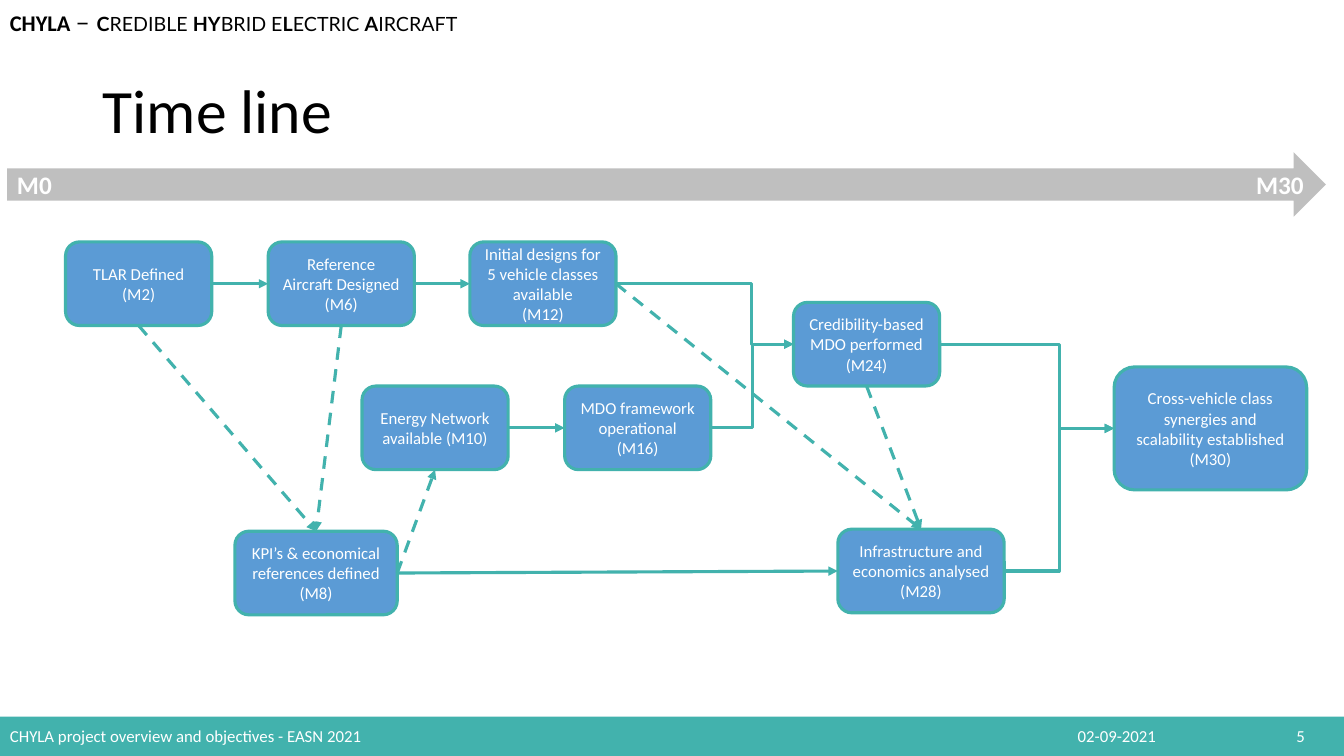
"""Build the CHYLA project time line slide."""
from lxml.etree import SubElement
from pptx import Presentation
from pptx.dml.color import RGBColor
from pptx.enum.dml import MSO_LINE
from pptx.enum.shapes import MSO_CONNECTOR as LINK, MSO_SHAPE as SHAPE
from pptx.enum.text import MSO_ANCHOR as ANCHOR, PP_ALIGN as ALIGN
from pptx.oxml.ns import qn
from pptx.util import Inches, Pt

TEAL = RGBColor(0x42, 0xB2, 0xAD)
BLUE = RGBColor(0x5B, 0x9B, 0xD5)
GREY = RGBColor(0xBF, 0xBF, 0xBF)
WHITE = RGBColor(0xFF, 0xFF, 0xFF)
BLACK = RGBColor(0, 0, 0)
TOP, LEFT, BOTTOM, RIGHT = range(4)

prs = Presentation()
prs.slide_width, prs.slide_height = Inches(13.33), Inches(7.5)
slide = prs.slides.add_slide(prs.slide_layouts[5])
shapes = slide.shapes


def add_block(kind, box, fill):
    block = shapes.add_shape(kind, *map(Inches, box))
    block.shadow.inherit = False
    block.fill.solid()
    block.fill.fore_color.rgb = fill
    block.line.fill.background()
    return block


def add_label(text, box, size, bold=False, align=ALIGN.LEFT):
    label = shapes.add_textbox(*map(Inches, box))
    frame = label.text_frame
    frame.word_wrap = True
    frame.vertical_anchor = ANCHOR.MIDDLE
    line = frame.paragraphs[0]
    line.text = text
    line.alignment = align
    line.font.name, line.font.size, line.font.bold = "Calibri", Pt(size), bold
    line.font.color.rgb = WHITE


add_block(SHAPE.RECTANGLE, (0, 7.11, 13.33, 0.39), TEAL)
add_label("02-09-2021", (10.59, 7.1, 1.75, 0.4), 12)
add_label("CHYLA project overview and objectives - EASN 2021", (0, 7.1, 9.96, 0.4), 12)
add_label("5", (12.37, 7.1, 0.67, 0.4), 12, align=ALIGN.RIGHT)

header = shapes.add_textbox(Inches(0), Inches(0.01), Inches(9.96), Inches(0.4))
header.text_frame.word_wrap = True
header_line = header.text_frame.paragraphs[0]
header_parts = [
    ("CHYLA ", "Calibri", 16, True), ("– ", "Lato", 18, False),
    ("C", "Lato", 14, True), ("REDIBLE ", "Lato", 14, False),
    ("HY", "Lato", 14, True), ("BRID E", "Lato", 14, False),
    ("L", "Lato", 14, True), ("ECTRIC ", "Lato", 14, False),
    ("A", "Lato", 14, True), ("IRCRAFT", "Lato", 14, False),
]
for text, font_name, size, bold in header_parts:
    part = header_line.add_run()
    part.text = text
    part.font.name, part.font.size, part.font.bold = font_name, Pt(size), bold
    part.font.color.rgb = BLACK

title = shapes.title
title.left, title.top, title.width, title.height = map(Inches, (0.92, 0.4, 11.5, 1.45))
title.text_frame.text = "Time line"
title.text_frame.vertical_anchor = ANCHOR.MIDDLE
title_line = title.text_frame.paragraphs[0]
title_line.alignment = ALIGN.LEFT
title_line.line_spacing = 0.9
title_line.font.name, title_line.font.size = "Calibri", Pt(44)
title_line.font.color.rgb = BLACK

milestones = {
    "reference": ("Reference Aircraft Designed\n(M6)", 2.66, 2.4, 1.45, 0.83),
    "tlar": ("TLAR Defined\n(M2)", 0.65, 2.4, 1.45, 0.83),
    "kpi": ("KPI’s & economical references defined\n(M8)", 2.33, 5.27, 1.61, 0.83),
    "energy": ("Energy Network available (M10)", 3.59, 3.83, 1.45, 0.83),
    "designs": ("Initial designs for 5 vehicle classes available\n(M12)", 4.66, 2.4, 1.45, 0.83),
    "framework": ("MDO framework operational\n(M16)", 5.6, 3.83, 1.45, 0.83),
    "credibility": ("Credibility-based MDO performed\n(M24)", 7.87, 3, 1.45, 0.83),
    "economics": ("Infrastructure and economics analysed (M28)", 8.31, 5.25, 1.65, 0.83),
    "synergies": ("Cross-vehicle class synergies and scalability established\n(M30)", 11.05, 3.64, 1.91, 1.22),
}
steps = {}
for key, (text, *box) in milestones.items():
    step = steps[key] = add_block(SHAPE.ROUNDED_RECTANGLE, box, BLUE)
    step.line.color.rgb = TEAL
    step.line.width = Pt(2.25)
    step.text_frame.word_wrap = True
    step.text_frame.vertical_anchor = ANCHOR.MIDDLE
    step.text_frame.text = text
    for line in step.text_frame.paragraphs:
        line.alignment = ALIGN.CENTER
        line.font.name, line.font.size = "Calibri", Pt(12)
        line.font.color.rgb = WHITE

SOLID, DASH = MSO_LINE.SOLID, MSO_LINE.DASH
dependencies = [
    ("tlar", RIGHT, "reference", LEFT, SOLID, None),
    ("reference", RIGHT, "designs", LEFT, SOLID, None),
    ("energy", RIGHT, "framework", LEFT, SOLID, None),
    ("designs", RIGHT, "credibility", LEFT, SOLID, 0.766),
    ("framework", RIGHT, "credibility", LEFT, SOLID, 0.5),
    ("credibility", RIGHT, "synergies", LEFT, SOLID, 0.685),
    ("economics", RIGHT, "synergies", LEFT, SOLID, 0.5),
    ("credibility", BOTTOM, "economics", TOP, DASH, None),
    ("kpi", RIGHT, "economics", LEFT, SOLID, None),
    ("designs", RIGHT, "economics", TOP, DASH, None),
    ("tlar", BOTTOM, "kpi", TOP, DASH, None),
    ("reference", BOTTOM, "kpi", TOP, DASH, None),
    ("kpi", RIGHT, "energy", BOTTOM, DASH, None),
]
for source, source_side, target, target_side, dash, bend in dependencies:
    arrow = shapes.add_connector(LINK.ELBOW if bend else LINK.STRAIGHT, 0, 0, 0, 0)
    arrow.begin_connect(steps[source], source_side)
    arrow.end_connect(steps[target], target_side)
    arrow.line.color.rgb = TEAL
    arrow.line.width = Pt(2.25)
    arrow.line.dash_style = dash
    properties = arrow._element.spPr
    SubElement(properties.find(qn("a:ln")), qn("a:tailEnd"), type="triangle")
    SubElement(properties, qn("a:effectLst"))
    if bend:
        guides = properties.find(qn("a:prstGeom")).find(qn("a:avLst"))
        SubElement(guides, qn("a:gd"), name="adj1", fmla=f"val {round(bend * 100000)}")

add_block(SHAPE.RIGHT_ARROW, (0.07, 1.51, 13.08, 0.64), GREY)
for month, left in (("M0", 0.07), ("M30", 12.36)):
    add_label(month, (left, 1.63, 0.85, 0.4), 18, bold=True)

prs.save("out.pptx")
